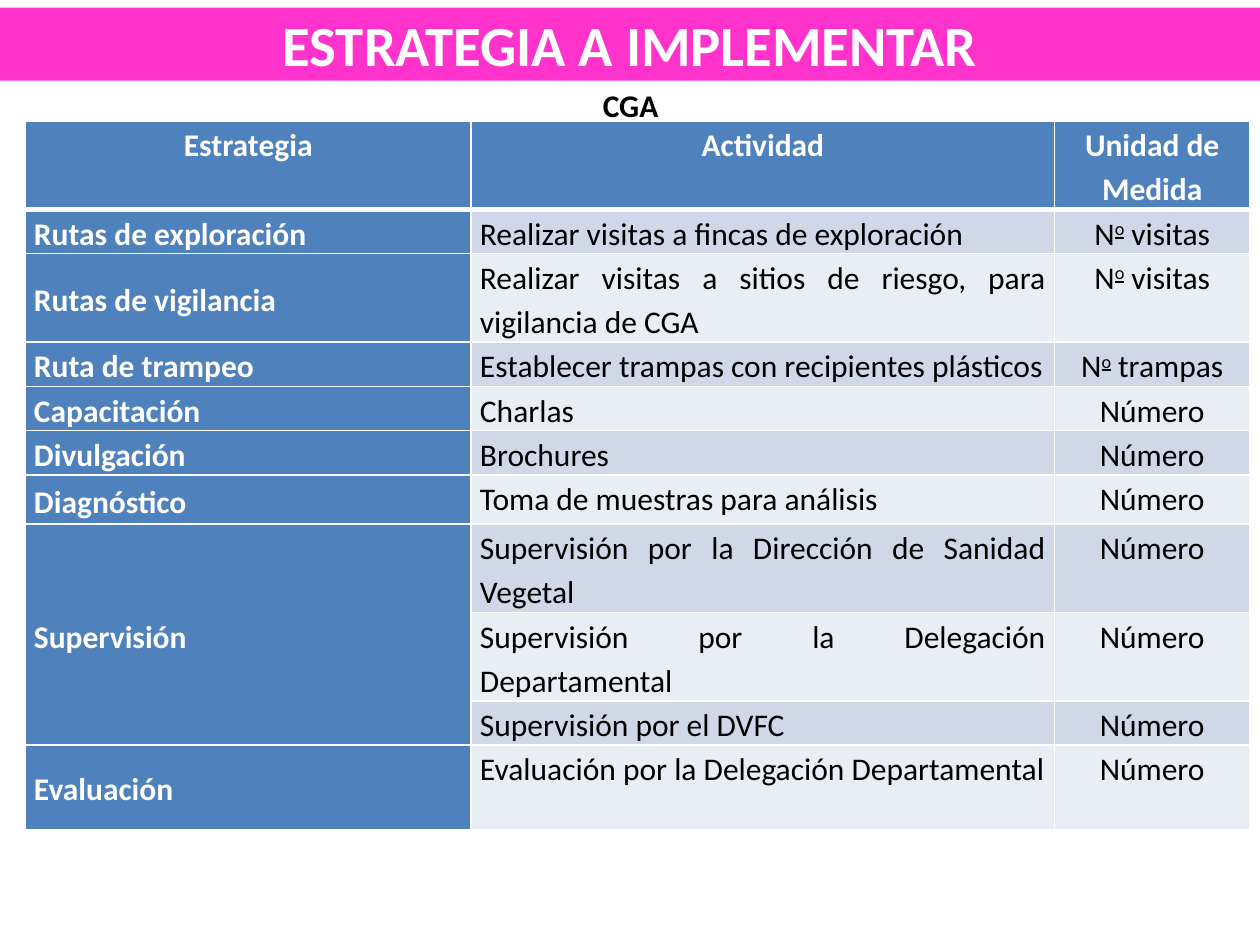
import pptx
import pptx.util
import pptx.dml.color
import pptx.enum.shapes
import pptx.enum.text
import lxml.etree

ALIGN = pptx.enum.text.PP_ALIGN
ANCHOR = pptx.enum.text.MSO_ANCHOR
WHITE, BLACK, PINK, BLUE = "FFFFFF", "000000", "FF33CC", "4F81BD"
BANDS = ["E9EDF4", "D0D8E8"]
LINE = 0.35


def color(value):
    return pptx.dml.color.RGBColor.from_string(value)


def add_run(paragraph, text, size, value, bold):
    run = paragraph.add_run()
    run.text = text
    run.font.name = "Calibri"
    run.font.size = pptx.util.Pt(size)
    run.font.bold = bold
    run.font.color.rgb = color(value)
    return run


presentation = pptx.Presentation()
presentation.slide_width = pptx.util.Inches(10)
presentation.slide_height = pptx.util.Inches(7.5)
slide = presentation.slides.add_slide(presentation.slide_layouts[6])

banner = slide.shapes.add_shape(
    pptx.enum.shapes.MSO_SHAPE.RECTANGLE,
    0, pptx.util.Inches(0.06), presentation.slide_width, pptx.util.Inches(0.58))
banner.shadow.inherit = False
banner.fill.solid()
banner.fill.fore_color.rgb = color(PINK)
banner.line.fill.background()
banner.text_frame.vertical_anchor = ANCHOR.MIDDLE
paragraph = banner.text_frame.paragraphs[0]
paragraph.alignment = ALIGN.CENTER
add_run(paragraph, "ESTRATEGIA A IMPLEMENTAR", 32.4, WHITE, True)

rows = [
    ("Estrategia", "Actividad", "Unidad de Medida", 2 * LINE),
    ("Rutas de exploración", "Realizar visitas a fincas de exploración", "visitas", LINE),
    ("Rutas de vigilancia", "Realizar visitas a sitios de riesgo, para vigilancia de CGA", "visitas", 2 * LINE),
    ("Ruta de trampeo", "Establecer trampas con recipientes plásticos", "trampas", LINE),
    ("Capacitación", "Charlas", "Número", LINE),
    ("Divulgación", "Brochures", "Número", LINE),
    ("Diagnóstico", "Toma de muestras para análisis", "Número", 0.39),
    ("Supervisión", "Supervisión por la Dirección de Sanidad Vegetal", "Número", 2 * LINE),
    ("", "Supervisión por la Delegación Departamental", "Número", 2 * LINE),
    ("", "Supervisión por el DVFC", "Número", LINE),
    ("Evaluación", "Evaluación por la Delegación Departamental", "Número", 0.67),
]
column_widths = [3.54, 4.63, 1.55]

table = slide.shapes.add_table(
    len(rows), len(column_widths),
    pptx.util.Inches(0.2), pptx.util.Inches(0.96),
    pptx.util.Inches(sum(column_widths)),
    pptx.util.Inches(sum(row[-1] for row in rows))).table
for column, width in zip(table.columns, column_widths):
    column.width = pptx.util.Inches(width)

for row_index, (*texts, height) in enumerate(rows):
    table.rows[row_index].height = pptx.util.Inches(height)
    for column_index, text in enumerate(texts):
        cell = table.cell(row_index, column_index)
        header = row_index == 0
        label = header or column_index == 0
        cell.margin_left = cell.margin_right = pptx.util.Inches(0.07)
        cell.margin_top = cell.margin_bottom = 0
        cell.vertical_anchor = ANCHOR.MIDDLE if label and not header else ANCHOR.TOP

        properties = cell._tc.get_or_add_tcPr()
        for side in "LRTB":
            thick = (row_index, side) in [(0, "B"), (1, "T")]
            border = lxml.etree.SubElement(
                properties, pptx.oxml.ns.qn(f"a:ln{side}"), w=str(pptx.util.Pt(3 if thick else 1)))
            border_fill = lxml.etree.SubElement(border, pptx.oxml.ns.qn("a:solidFill"))
            lxml.etree.SubElement(border_fill, pptx.oxml.ns.qn("a:srgbClr"), val=WHITE)
        cell.fill.solid()
        cell.fill.fore_color.rgb = color(BLUE if label else BANDS[row_index % 2])

        paragraph = cell.text_frame.paragraphs[0]
        paragraph.alignment = ALIGN.CENTER if header or column_index == 2 else ALIGN.JUSTIFY
        paragraph.line_spacing = 1.15
        style = (18, WHITE if label else BLACK, label)
        if text in ("visitas", "trampas"):
            add_run(paragraph, "N", *style)
            ordinal = add_run(paragraph, "o", *style)
            ordinal.font.underline = True
            ordinal._r.get_or_add_rPr().set("baseline", "30000")
            add_run(paragraph, f" {text}", *style)
        elif text:
            add_run(paragraph, text, *style)

table.cell(7, 0).merge(table.cell(9, 0))

subtitle = slide.shapes.add_textbox(
    pptx.util.Inches(0.28), pptx.util.Inches(0.63),
    pptx.util.Inches(9.45), pptx.util.Inches(0.4))
subtitle.text_frame.word_wrap = True
subtitle.text_frame.auto_size = pptx.enum.text.MSO_AUTO_SIZE.SHAPE_TO_FIT_TEXT
paragraph = subtitle.text_frame.paragraphs[0]
paragraph.alignment = ALIGN.CENTER
add_run(paragraph, "CGA", 18, BLACK, True)

presentation.save("out.pptx")
